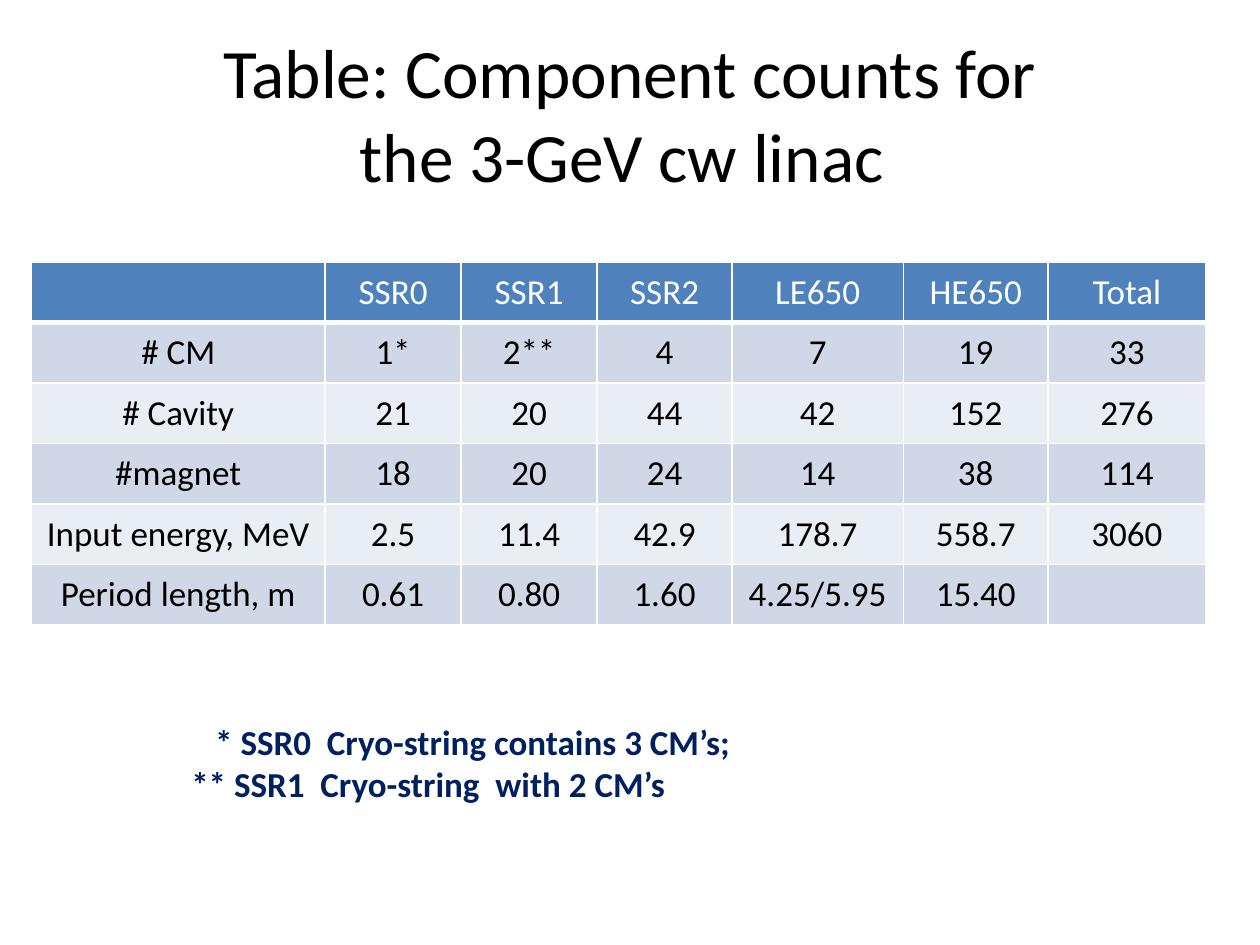
from lxml import etree
from pptx import Presentation
from pptx.dml.color import RGBColor
from pptx.enum.text import MSO_ANCHOR, PP_ALIGN
from pptx.oxml.ns import qn
from pptx.util import Inches, Pt

CENTER, LEFT = PP_ALIGN.CENTER, PP_ALIGN.LEFT
MIDDLE, TOP = MSO_ANCHOR.MIDDLE, MSO_ANCHOR.TOP
HUES = {"head": "4F81BD", "odd": "D0D8E8", "even": "E9EDF4",
        "white": "FFFFFF", "black": "000000", "navy": "002060"}
TITLE = "Table: Component counts for\nthe 3-GeV cw linac "
NOTES = ["* SSR0  Cryo-string contains 3 CM’s;",
         "** SSR1  Cryo-string  with 2 CM’s"]
COLS = [2.33, 1.08, 1.08, 1.07, 1.36, 1.15, 1.25]
ROW = 0.48
COUNTS = [
    ["", "SSR0", "SSR1", "SSR2", "LE650", "HE650", "Total"],
    ["# CM", "1*", "2**", "4", "7", "19", "33"],
    ["# Cavity", "21", "20", "44", "42", "152", "276"],
    ["#magnet", "18", "20", "24", "14", "38", "114"],
    ["Input energy, MeV", "2.5", "11.4", "42.9", "178.7", "558.7", "3060"],
    ["Period length, m", "0.61", "0.80", "1.60", "4.25/5.95", "15.40", ""],
]


def style(para, size, hue, align=CENTER, bold=False):
    """Set the alignment and font of a paragraph."""
    para.alignment = align
    look = {"name": "Calibri", "size": Pt(size), "bold": bold}
    for key, value in look.items():
        setattr(para.font, key, value)
    para.font.color.rgb = RGBColor.from_string(HUES[hue])


def add_text(slide, box, lines, anchor, **look):
    """Add a wrapped text box with one paragraph per line."""
    frame = slide.shapes.add_textbox(*map(Inches, box)).text_frame
    frame.word_wrap = True
    frame.vertical_anchor = anchor
    for i, line in enumerate(lines):
        para = frame.add_paragraph() if i else frame.paragraphs[0]
        para.text = line
        style(para, **look)
    return frame


def add_edges(cell, widths):
    """Draw white borders of the given point widths on a cell."""
    props = cell._tc.get_or_add_tcPr()
    for side, width in widths.items():
        line = etree.SubElement(props, qn(f"a:ln{side}"), w=str(Pt(width)))
        fill = etree.SubElement(line, qn("a:solidFill"))
        etree.SubElement(fill, qn("a:srgbClr"), val=HUES["white"])


def fill_cell(cell, text, row):
    """Write and format one table cell according to its row."""
    cell.text = text
    cell.vertical_anchor = MIDDLE
    style(cell.text_frame.paragraphs[0], 20, "black" if row else "white")
    add_edges(cell, {"L": 1, "R": 1, "T": 1 if row != 1 else 3,
                     "B": 1 if row else 3})
    cell.fill.solid()
    band = ("odd" if row % 2 else "even") if row else "head"
    cell.fill.fore_color.rgb = RGBColor.from_string(HUES[band])


def add_counts(slide, left, top):
    """Add the table of component counts."""
    size = (left, top, sum(COLS), ROW * len(COUNTS))
    table = slide.shapes.add_table(
        len(COUNTS), len(COLS), *map(Inches, size)).table
    for col, width in zip(table.columns, COLS):
        col.width = Inches(width)
    for r, texts in enumerate(COUNTS):
        table.rows[r].height = Inches(ROW)
        for c, text in enumerate(texts):
            fill_cell(table.cell(r, c), text, r)


def main():
    """Build the slide and save it."""
    deck = Presentation()
    deck.slide_width, deck.slide_height = Inches(10), Inches(7.5)
    slide = deck.slides.add_slide(deck.slide_layouts[6])
    add_text(slide, (0.5, 0.42, 9, 0.95), [TITLE], MIDDLE,
             size=39.6, hue="black")
    add_counts(slide, 0.25, 2.08)
    notes = add_text(slide, (1.42, 5.67, 7.17, 0.77), NOTES, TOP,
                     size=20, hue="navy", align=LEFT, bold=True)
    first = notes.paragraphs[0]._p.get_or_add_pPr()
    first.set("indent", str(Inches(0.19)))
    deck.save("out.pptx")


if __name__ == "__main__":
    main()
